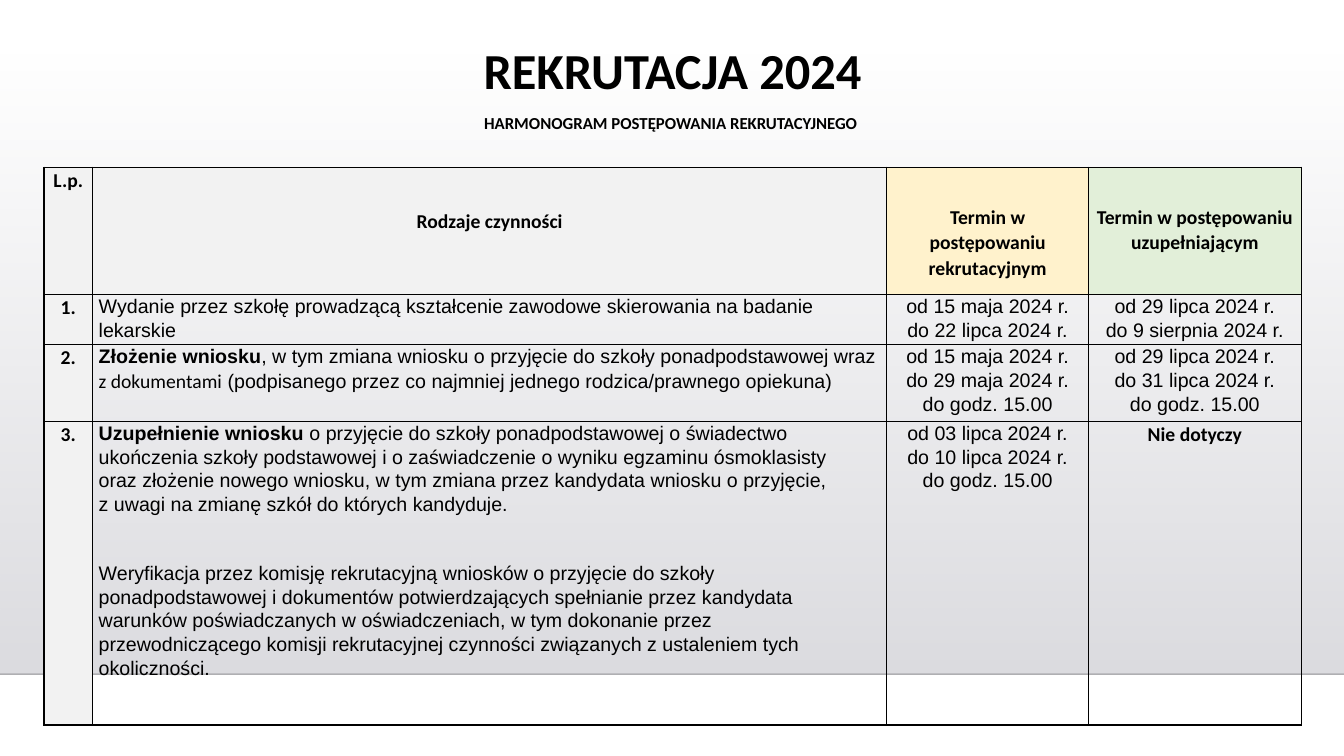
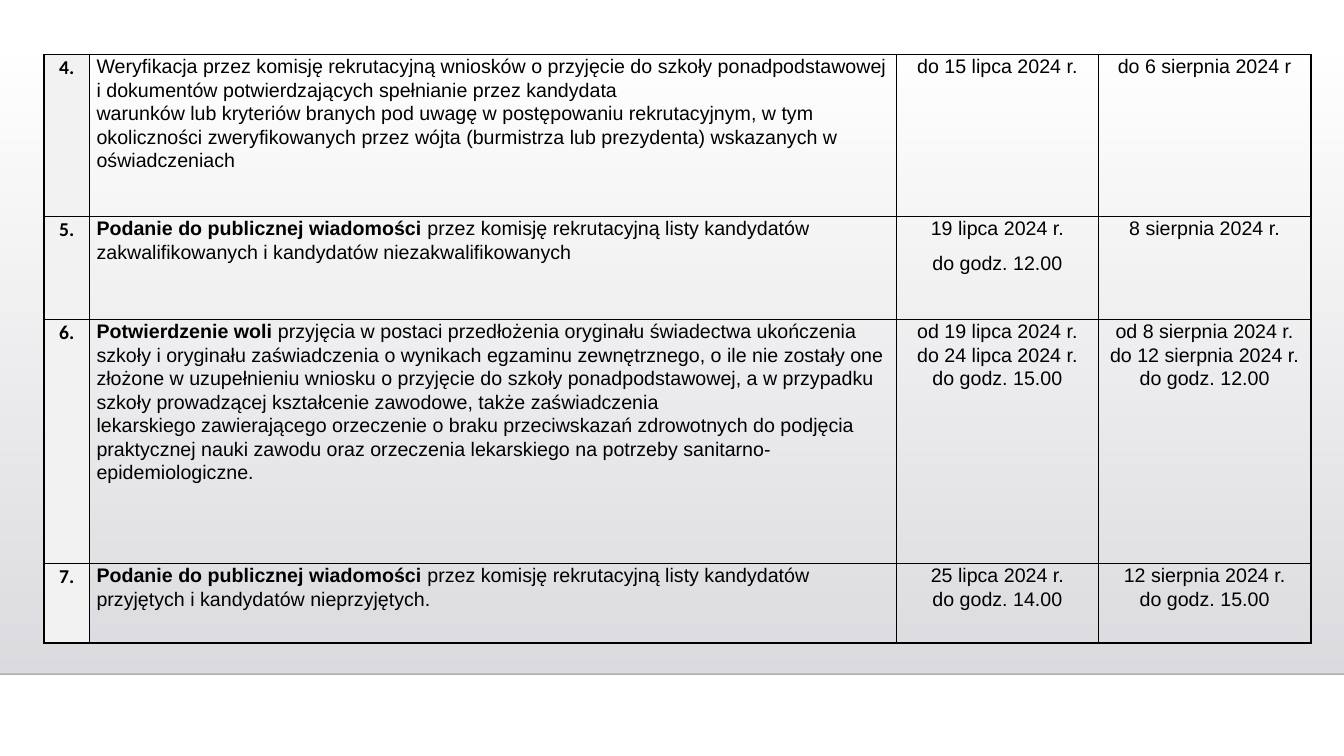
from copy import deepcopy

from lxml import etree
from pptx import Presentation
from pptx.dml.color import RGBColor
from pptx.enum import shapes, text
from pptx.oxml.ns import qn
from pptx.util import Pt

BLACK = RGBColor(0x00, 0x00, 0x00)
LINE = RGBColor(0x00, 0x00, 0x01)
BAND_TOP = RGBColor(0xDC, 0xDC, 0xE0)
BAND_BOTTOM = RGBColor(0xDE, 0xDE, 0xE2)
GREY = RGBColor(0xF2, 0xF2, 0xF2)
YELLOW = RGBColor(0xFF, 0xF2, 0xCC)
GREEN = RGBColor(0xE2, 0xEF, 0xD9)

WIDTH, HEIGHT = 960, 540
BAND_Y, BAND_H = 36.5, 445
TABLE_X = 31.5
LEFT, CENTER = text.PP_ALIGN.LEFT, text.PP_ALIGN.CENTER

# Text styles: font, size, bold
TITLE = ("Calibri", 36, True)
SUBTITLE = ("Calibri", 12, True)
LABEL = ("Calibri", 14, True)
PLAIN = ("Calibri", 14, False)
BODY = ("Arial", 14, False)
STRONG = ("Arial", 14, True)


def para(*runs, before=0):
    """A paragraph: its (text, style) runs and the space before it."""
    return runs, before


# Header cells: text, fill, top margin, line spacing
HEADER = [
    ("L.p.", GREY, 0, 1.07),
    ("Rodzaje czynności", GREY, 27.6, 1.15),
    ("Termin w postępowaniu rekrutacyjnym", YELLOW, 26.3, 1.07),
    ("Termin w postępowaniu uzupełniającym", GREEN, 26.3, 1.07),
]

# Schedule rows: number, activity, main date, supplementary date
FIRST_ROWS = [
    ("1.",
     [para(("Wydanie przez szkołę prowadzącą kształcenie zawodowe skierowania na "
            "badanie lekarskie", BODY))],
     [para(("od 15 maja 2024 r.\ndo 22 lipca 2024 r.", BODY))],
     [para(("od 29 lipca 2024 r.\ndo 9 sierpnia 2024 r.", BODY))]),
    ("2.",
     [para(("Złożenie wniosku", STRONG),
           (", w tym zmiana wniosku o przyjęcie do szkoły ponadpodstawowej wraz ", BODY),
           ("z dokumentami", PLAIN),
           (" (podpisanego przez co najmniej jednego rodzica/prawnego opiekuna)", BODY))],
     [para(("od 15 maja 2024 r.\ndo 29 maja 2024 r.\ndo godz. 15.00", BODY))],
     [para(("od 29 lipca 2024 r.\ndo 31 lipca 2024 r.\ndo godz. 15.00", BODY))]),
    ("3.",
     [para(("Uzupełnienie wniosku", STRONG),
           (" o przyjęcie do szkoły ponadpodstawowej o świadectwo ukończenia szkoły "
            "podstawowej i o zaświadczenie o wyniku egzaminu ósmoklasisty\n"
            "oraz złożenie nowego wniosku, w tym zmiana przez kandydata wniosku "
            "o przyjęcie,\nz uwagi na zmianę szkół do których kandyduje.", BODY)),
      para(("Weryfikacja przez komisję rekrutacyjną wniosków o przyjęcie do szkoły "
            "ponadpodstawowej i dokumentów potwierdzających spełnianie przez kandydata "
            "warunków poświadczanych w oświadczeniach, w tym dokonanie przez "
            "przewodniczącego komisji rekrutacyjnej czynności związanych z ustaleniem "
            "tych okoliczności.", BODY), before=33)],
     [para(("od 03 lipca 2024 r.\ndo 10 lipca 2024 r.\ndo godz. 15.00", BODY))],
     [para(("Nie dotyczy", LABEL))]),
]

SECOND_ROWS = [
    ("4.",
     [para(("Weryfikacja przez komisję rekrutacyjną wniosków o przyjęcie do szkoły "
            "ponadpodstawowej i dokumentów potwierdzających spełnianie przez kandydata\n"
            "warunków lub kryteriów branych pod uwagę w postępowaniu rekrutacyjnym, w tym "
            "okoliczności zweryfikowanych przez wójta (burmistrza lub prezydenta) "
            "wskazanych w oświadczeniach", BODY))],
     [para(("do 15 lipca 2024 r.", BODY))],
     [para(("do 6 sierpnia 2024 r", BODY))]),
    ("5.",
     [para(("Podanie do publicznej wiadomości", STRONG),
           (" przez komisję rekrutacyjną listy kandydatów zakwalifikowanych "
            "i kandydatów niezakwalifikowanych", BODY))],
     [para(("19 lipca 2024 r.", BODY)), para(("do godz. 12.00", BODY), before=8)],
     [para(("8 sierpnia 2024 r.", BODY))]),
    ("6.",
     [para(("Potwierdzenie woli", STRONG),
           (" przyjęcia w postaci przedłożenia oryginału świadectwa ukończenia szkoły "
            "i oryginału zaświadczenia o wynikach egzaminu zewnętrznego, o ile nie zostały "
            "one złożone w uzupełnieniu wniosku o przyjęcie do szkoły ponadpodstawowej, "
            "a w przypadku szkoły prowadzącej kształcenie zawodowe, także zaświadczenia\n"
            "lekarskiego zawierającego orzeczenie o braku przeciwskazań zdrowotnych do "
            "podjęcia\npraktycznej nauki zawodu oraz orzeczenia lekarskiego na potrzeby "
            "sanitarno-epidemiologiczne.", BODY))],
     [para(("od 19 lipca 2024 r.\ndo 24 lipca 2024 r.\ndo godz. 15.00", BODY))],
     [para(("od 8 sierpnia 2024 r.\ndo 12 sierpnia 2024 r.\ndo godz. 12.00", BODY))]),
    ("7.",
     [para(("Podanie do publicznej wiadomości", STRONG),
           (" przez komisję rekrutacyjną listy kandydatów przyjętych i kandydatów "
            "nieprzyjętych.", BODY))],
     [para(("25 lipca 2024 r.\ndo godz. 14.00", BODY))],
     [para(("12 sierpnia 2024 r.\ndo godz. 15.00", BODY))]),
]


def set_alpha(shape, *percents):
    """Set the opacity of the shape's colours, in order."""
    for clr, percent in zip(shape._element.xpath(".//a:srgbClr"), percents):
        etree.SubElement(clr, qn("a:alpha")).set("val", str(percent * 1000))


def add_run(p, words, style):
    """Add words in one style; each newline becomes a line break."""
    name, size, bold = style
    for i, line in enumerate(words.split("\n")):
        if i:
            p.add_line_break()
            p._p[-1].append(deepcopy(r._r.rPr))
        r = p.add_run()
        r.text = line
        r.font.name, r.font.size, r.font.bold = name, Pt(size), bold
        r.font.color.rgb = BLACK


def write(tf, paragraphs, align=CENTER, spacing=1.07):
    for i, (runs, before) in enumerate(paragraphs):
        p = tf.add_paragraph() if i else tf.paragraphs[0]
        p.alignment, p.line_spacing = align, spacing
        p.space_before = Pt(before)
        for words, style in runs:
            add_run(p, words, style)


def add_slide(prs):
    """Add a slide with the shared gradient band and its bottom line."""
    s = prs.slides.add_slide(prs.slide_layouts[6])
    band = s.shapes.add_shape(shapes.MSO_SHAPE.RECTANGLE,
                              Pt(0), Pt(BAND_Y), Pt(WIDTH), Pt(BAND_H))
    band.shadow.inherit = False
    band.line.fill.background()
    band.fill.gradient()
    band.fill.gradient_angle = 270
    for stop, color in zip(band.fill.gradient_stops, (BAND_TOP, BAND_BOTTOM)):
        stop.color.rgb = color
    set_alpha(band, 0, 100)

    y = Pt(BAND_Y + BAND_H)
    line = s.shapes.add_connector(shapes.MSO_CONNECTOR.STRAIGHT, Pt(0), y, Pt(WIDTH), y)
    line.line.width = Pt(1)
    line.line.color.rgb = LINE
    set_alpha(line, 20)
    etree.SubElement(line._element.spPr, qn("a:effectLst"))
    return s


def add_title(s):
    tf = s.shapes.add_textbox(Pt(240), Pt(21.6), Pt(481), Pt(77)).text_frame
    tf.word_wrap = True
    write(tf, [para(("REKRUTACJA 2024", TITLE)),
               para(("HARMONOGRAM POSTĘPOWANIA REKRUTACYJNEGO ", SUBTITLE), before=8)])


def style_cell(cell, side, top=0, color=None):
    """Set margins, fill and a black border on all sides."""
    cell.margin_left = cell.margin_right = Pt(side)
    cell.margin_top, cell.margin_bottom = Pt(top), Pt(0)
    tcPr = cell._tc.get_or_add_tcPr()
    for tag in ("a:lnL", "a:lnR", "a:lnT", "a:lnB"):
        ln = etree.SubElement(tcPr, qn(tag), w=str(Pt(1)))
        fill = etree.SubElement(ln, qn("a:solidFill"))
        etree.SubElement(fill, qn("a:srgbClr"), val=str(BLACK))
    if color is None:
        cell.fill.background()
    else:
        cell.fill.solid()
        cell.fill.fore_color.rgb = color


def add_schedule(s, top, widths, heights, side, rows, header=()):
    frame = s.shapes.add_table(len(heights), len(widths), Pt(TABLE_X), Pt(top),
                               Pt(sum(widths)), Pt(sum(heights)))
    table = frame.table
    table.first_row = table.horz_banding = False
    for column, width in zip(table.columns, widths):
        column.width = Pt(width)
    for row, height in zip(table.rows, heights):
        row.height = Pt(height)

    for c, (words, color, margin, spacing) in enumerate(header):
        cell = table.cell(0, c)
        style_cell(cell, side, margin, color)
        write(cell.text_frame, [para((words, LABEL))], spacing=spacing)

    first = 1 if header else 0
    for r, (number, *contents) in enumerate(rows, first):
        for c, paragraphs in enumerate([[para((number, LABEL))], *contents]):
            cell = table.cell(r, c)
            style_cell(cell, side, color=None if c else GREY)
            write(cell.text_frame, paragraphs, LEFT if c == 1 else CENTER)


def main():
    prs = Presentation()
    prs.slide_width, prs.slide_height = Pt(WIDTH), Pt(HEIGHT)

    # Slide 1: title and the first part of the schedule
    s = add_slide(prs)
    add_title(s)
    add_schedule(s, 119.5, (34.5, 567.5, 144, 152), (90.7, 36, 54.7, 217), 4.5,
                 FIRST_ROWS, HEADER)

    # Slide 2: the rest of the schedule
    s = add_slide(prs)
    add_schedule(s, 38.9, (32.5, 576.5, 144, 152), (115.8, 73.5, 174.2, 57), 5,
                 SECOND_ROWS)

    prs.save("out.pptx")


if __name__ == "__main__":
    main()
